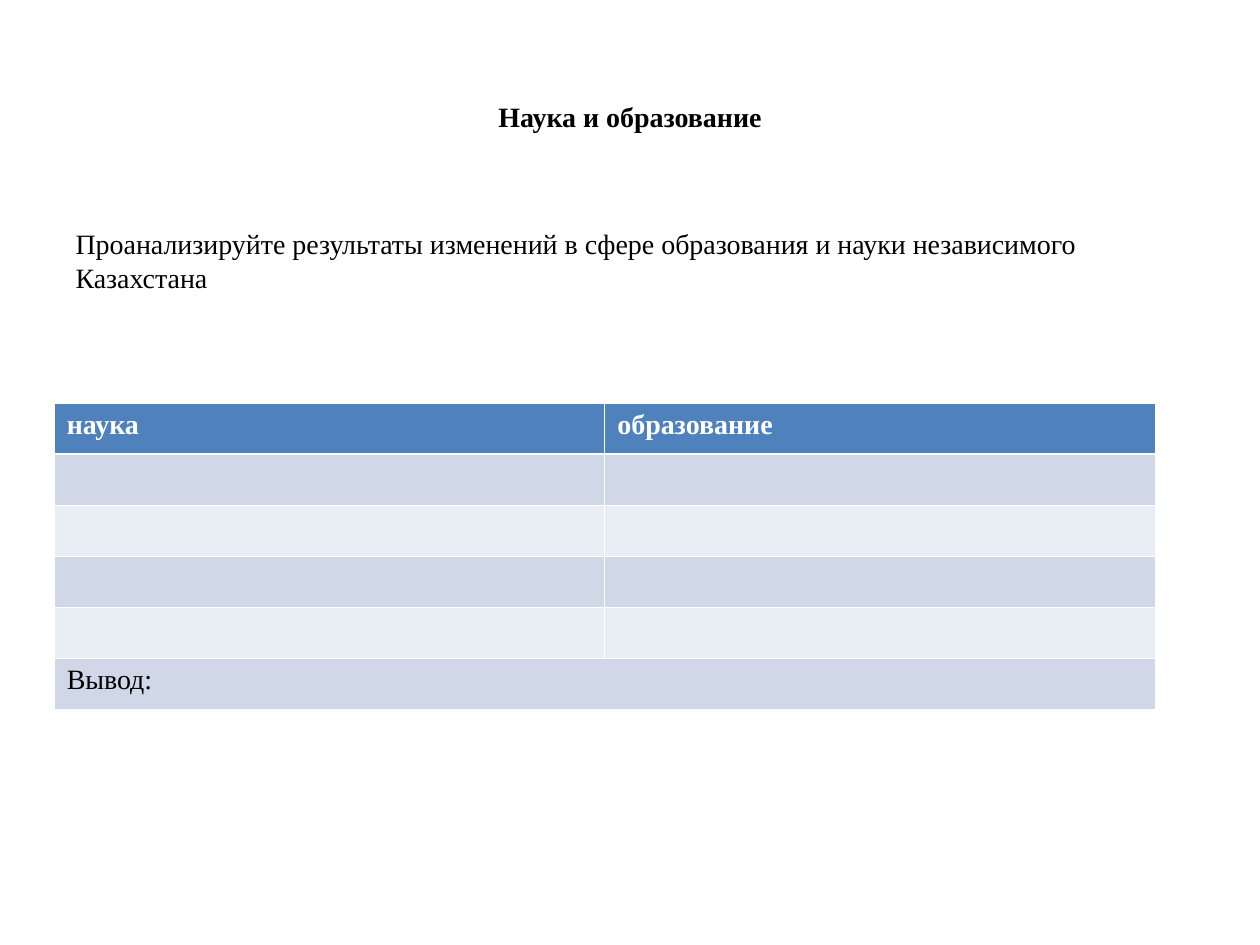
from pptx import Presentation, util as u
from pptx.dml.color import RGBColor
from pptx.enum import text
from lxml import etree


def style(par, color, bold=False):
    for run in par.runs:
        font = run.font
        font.name = "Times New Roman"
        font.size = u.Pt(16)
        font.bold = bold
        font.color.rgb = RGBColor.from_string(color)


def place(shape, left, top, width, height):
    shape.left, shape.top = u.Inches(left), u.Inches(top)
    shape.width, shape.height = u.Inches(width), u.Inches(height)


deck = Presentation()
deck.slide_width, deck.slide_height = u.Inches(10), u.Inches(7.5)
slide = deck.slides.add_slide(deck.slide_layouts[1])

title = slide.shapes.title
place(title, 0.5, 0.3, 9, 1.25)
title.text_frame.text = "Наука и образование"
title.text_frame.vertical_anchor = text.MSO_ANCHOR.MIDDLE
head = title.text_frame.paragraphs[0]
head.alignment = text.PP_ALIGN.CENTER
style(head, "000000", True)

body = slide.placeholders[1]
place(body, 0.5, 1.75, 9, 4.95)
body.text_frame.text = "Проанализируйте результаты изменений в сфере образования и науки независимого Казахстана"
task = body.text_frame.paragraphs[0]
style(task, "000000")
props = task._p.get_or_add_pPr()
props.set("marL", "0")
props.set("indent", "0")
etree.SubElement(props, "{http://schemas.openxmlformats.org/drawingml/2006/main}buNone")

rows = [("наука", "образование")] + [("", "")] * 4 + [("Вывод:", "")]
table = slide.shapes.add_table(
    len(rows), 2, u.Inches(0.43), u.Inches(3.2), u.Inches(8.74), u.Inches(2.43)
).table
for r, row in enumerate(rows):
    fill = "4F81BD" if r == 0 else ("E9EDF4", "D0D8E8")[r % 2]
    for c, word in enumerate(row):
        cell = table.cell(r, c)
        cell.fill.solid()
        cell.fill.fore_color.rgb = RGBColor.from_string(fill)
        if word:
            cell.text_frame.text = word
            style(cell.text_frame.paragraphs[0], "000000" if r else "FFFFFF", r == 0)
table.cell(5, 0).merge(table.cell(5, 1))

deck.save("out.pptx")
